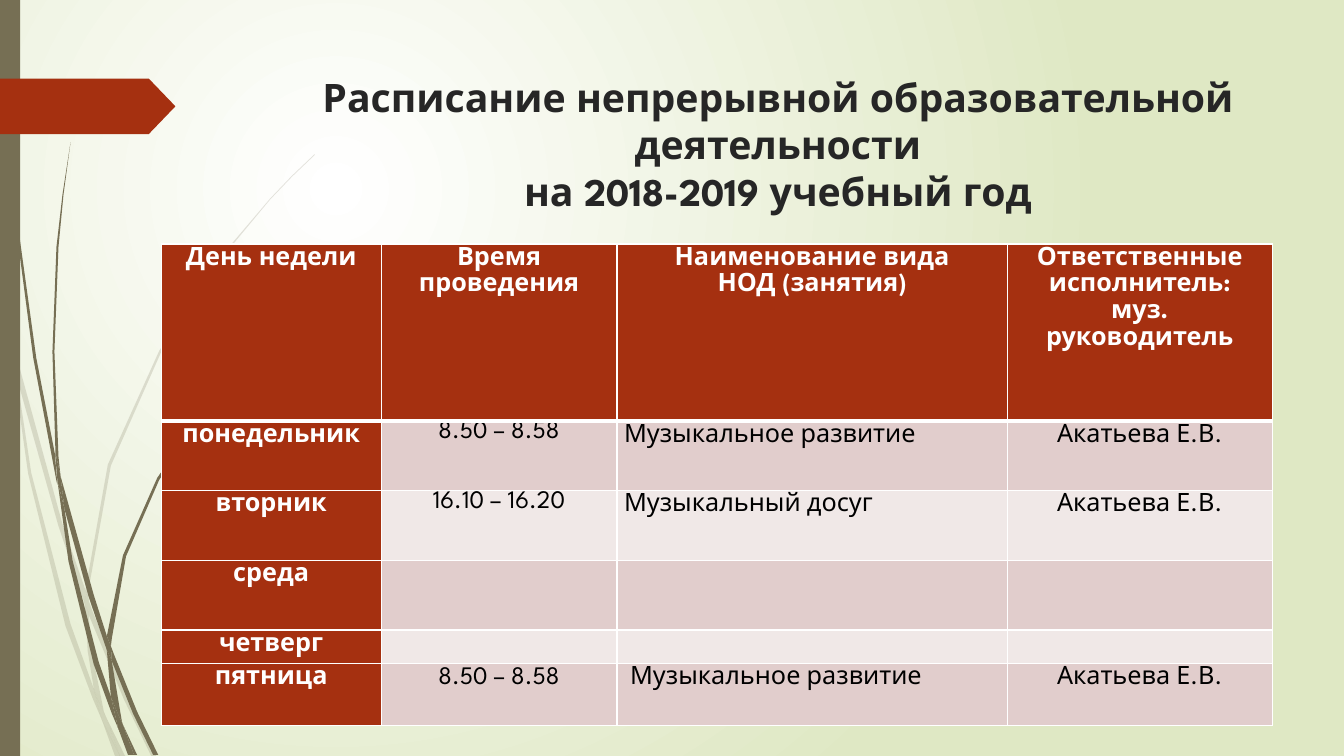
from lxml import etree
from pptx import Presentation
from pptx import util as u
from pptx.dml.color import RGBColor
from pptx.enum import shapes, text
from pptx.oxml import ns

Inches = u.Inches
FONT = "League Spartan"
WHITE = RGBColor(0xFF, 0xFF, 0xFF)
BLACK = RGBColor(0x00, 0x00, 0x00)
INK = RGBColor(0x26, 0x26, 0x26)
RUST = RGBColor(0xA5, 0x30, 0x10)
OLIVE = RGBColor(0x76, 0x6F, 0x54)
PALE_GREEN = RGBColor(0xDF, 0xE8, 0xC4)
BANDS = (RGBColor(0xF0, 0xE8, 0xE7), RGBColor(0xE1, 0xCD, 0xCC))

PALE_WISPS = [
    [(0.11, 3.5), (0.09, 3.22), (0, 2.82), (0, 2.99), (0.1, 3.44)],
    [(0.58, 5.22), (0.84, 5.99), (0.85, 5.86), (0.62, 5.2), (0.14, 3.45), (0.17, 3.76)],
    [(0.92, 6.07), (0.88, 5.96), (0.88, 6.1), (1.23, 6.94), (1.5, 7.5), (1.55, 7.5),
     (1.27, 6.92)],
    [(1.19, 7.5), (1.24, 7.5), (1.05, 7.11)],
    [(0.93, 6.83), (0.7, 6.19), (0.31, 4.69), (0.17, 3.76), (0.11, 3.5), (0.28, 4.7),
     (0.65, 6.21), (0.92, 6.93), (1.01, 7.14), (0.99, 7.07)],
    [(0.84, 5.99), (0.87, 6.46), (0.93, 6.83), (0.96, 6.92), (1.05, 7.11), (1.03, 7.06),
     (0.91, 6.46), (0.88, 6.1), (0.88, 6.08)],
    [(0.88, 5.84), (1.1, 4.62), (1.6, 3.49), (2.29, 2.45), (2.68, 1.98), (2.9, 1.75),
     (3.12, 1.54), (3.12, 1.53), (2.89, 1.75), (2.68, 1.97), (2.28, 2.44), (1.58, 3.48),
     (1.07, 4.61), (0.85, 5.84), (0.85, 5.86), (0.88, 5.96)],
    [(1.01, 7.14), (1.14, 7.5), (1.19, 7.5)],
    [(0.88, 6.08), (0.88, 6.1), (0.88, 5.96), (0.85, 5.86), (0.84, 5.99)],
    [(0.96, 6.92), (0.93, 6.83), (0.99, 7.07), (1.01, 7.14), (1.19, 7.5), (1.05, 7.11)],
]
DARK_WISPS = [
    [(0.07, 1.1), (0.17, 2.33), (0.33, 3.55), (0.56, 4.77), (0.57, 4.81), (0.55, 4.57),
     (0.55, 4.53), (0.36, 3.55), (0.19, 2.32), (0.08, 1.09), (0.05, 0.48), (0.04, 0),
     (0.03, 0), (0.04, 0.48)],
    [(0.88, 5.92), (1.06, 6.45), (1.06, 6.31), (0.93, 5.9), (0.6, 4.72), (0.64, 5.05)],
    [(1.13, 6.49), (1.1, 6.41), (1.11, 6.56), (1.32, 7.08), (1.52, 7.49), (1.57, 7.49),
     (1.36, 7.06)],
    [(1.1, 6.91), (0.98, 6.57), (0.72, 5.56), (0.64, 5.05), (0.57, 4.77), (0.68, 5.57),
     (0.93, 6.59), (1.11, 7.08), (1.17, 7.22), (1.16, 7.17)],
    [(0.6, 4.72), (0.58, 4.53), (0.54, 3.49), (0.58, 2.45), (0.63, 1.93), (0.7, 1.41),
     (0.62, 1.93), (0.56, 2.45), (0.52, 3.49), (0.55, 4.49)],
    [(1.33, 7.49), (1.36, 7.49), (1.22, 7.19)],
    [(0.57, 4.77), (0.64, 5.05), (0.6, 4.72), (0.55, 4.49), (0.55, 4.53)],
    [(1.11, 6.33), (1.25, 5.52), (1.58, 4.76), (2.05, 4.06), (2.31, 3.74), (2.45, 3.59),
     (2.61, 3.44), (2.45, 3.58), (2.31, 3.73), (2.04, 4.05), (1.56, 4.74), (1.22, 5.51),
     (1.06, 6.31), (1.1, 6.41)],
    [(1.17, 7.22), (1.27, 7.49), (1.31, 7.49)],
    [(1.06, 6.45), (1.1, 6.91), (1.16, 7.06), (1.22, 7.19), (1.21, 7.16), (1.11, 6.56),
     (1.09, 6.51)],
    [(1.06, 6.45), (1.09, 6.51), (1.11, 6.56), (1.1, 6.41), (1.06, 6.31)],
    [(1.16, 7.06), (1.1, 6.91), (1.16, 7.17), (1.17, 7.22), (1.3, 7.49), (1.33, 7.49),
     (1.22, 7.19)],
]

COLUMN_WIDTHS = (2.18, 2.34, 3.87, 2.63)
ROW_HEIGHTS = (1.76, 0.69, 0.69, 0.69, 0.33, 0.62)
TEACHER = "Акатьева Е.В."
SCHEDULE = [
    ("День недели", "Время проведения", "Наименование вида\nНОД (занятия)",
     "Ответственные исполнитель:\vмуз. руководитель"),
    ("понедельник", "8.50 – 8.58", "Музыкальное развитие", TEACHER),
    ("вторник", "16.10 – 16.20", "Музыкальный досуг", TEACHER),
    ("среда", "", "", ""),
    ("четверг", "", "", ""),
    ("пятница", "8.50 – 8.58", "Музыкальное развитие", TEACHER),
]


class ScheduleSlide:
    def __init__(self, presentation):
        self.slide = presentation.slides.add_slide(presentation.slide_layouts[5])

    def background(self, inner, outer):
        fill = self.slide.background.fill
        fill.gradient()
        for stop, color, position in zip(fill.gradient_stops, (inner, outer), (0, 1)):
            stop.color.rgb = color
            stop.position = position
        gradient = next(self.slide.element.iter(ns.qn("a:gradFill")))
        gradient.remove(gradient.find(ns.qn("a:lin")))
        circle = etree.SubElement(gradient, ns.qn("a:path"), path="circle")
        etree.SubElement(circle, ns.qn("a:fillToRect"),
                         l="50000", t="50000", r="100000", b="100000")

    def paint(self, shape, color, opacity=100):
        shape.shadow.inherit = False
        shape.fill.solid()
        shape.fill.fore_color.rgb = color
        shape.line.fill.background()
        if opacity < 100:
            tint = next(shape.element.spPr.iter(ns.qn("a:srgbClr")))
            etree.SubElement(tint, ns.qn("a:alpha"), val=str(opacity * 1000))

    def wisps(self, outlines, color, opacity=100):
        group = self.slide.shapes.add_group_shape()
        for outline in outlines:
            points = [(Inches(x), Inches(y)) for x, y in outline]
            builder = group.shapes.build_freeform(*points[0])
            builder.add_line_segments(points[1:], close=True)
            self.paint(builder.convert_to_shape(), color, opacity)

    def preset(self, kind, left, top, width, height, color):
        shape = self.slide.shapes.add_shape(
            kind, Inches(left), Inches(top), Inches(width), Inches(height))
        self.paint(shape, color)
        return shape

    def format_paragraphs(self, frame, size, color, bold, alignment, spacing):
        for paragraph in frame.paragraphs:
            paragraph.alignment = alignment
            paragraph.line_spacing = spacing
            paragraph.font.name = FONT
            paragraph.font.size = u.Pt(size)
            paragraph.font.bold = bold
            paragraph.font.color.rgb = color

    def title(self, wording, left, top, width, height):
        shape = self.slide.shapes.title
        shape.left, shape.top = Inches(left), Inches(top)
        shape.width, shape.height = Inches(width), Inches(height)
        frame = shape.text_frame
        frame.text = wording
        frame.word_wrap = True
        frame.auto_size = text.MSO_AUTO_SIZE.NONE
        frame.vertical_anchor = text.MSO_ANCHOR.TOP
        self.format_paragraphs(frame, 28, INK, True, text.PP_ALIGN.CENTER, 1.0)

    def border(self, cell, side, width):
        properties = cell._tc.get_or_add_tcPr()
        line = etree.SubElement(properties, ns.qn("a:ln" + side), w=str(u.Pt(width)))
        fill = etree.SubElement(line, ns.qn("a:solidFill"))
        etree.SubElement(fill, ns.qn("a:srgbClr"), val=str(WHITE))

    def cell(self, cell, wording, row, column):
        heading = row == 0 or column == 0
        for side in "LRTB":
            thick = (row == 0 and side == "B") or (row == 1 and side == "T")
            self.border(cell, side, 3 if thick else 1)
        cell.fill.solid()
        cell.fill.fore_color.rgb = RUST if heading else BANDS[row % 2]
        cell.margin_left = cell.margin_right = Inches(0.07)
        cell.margin_top = cell.margin_bottom = 0
        if (row, column) == (5, 2):
            cell.margin_left = Inches(0.13)
        cell.text = wording
        left_aligned = column == 2 and not heading
        self.format_paragraphs(
            cell.text_frame, 18, WHITE if heading else BLACK, heading,
            text.PP_ALIGN.LEFT if left_aligned else text.PP_ALIGN.CENTER,
            1.0 if column == 1 and row in (1, 2) else 1.15)

    def table(self, rows, left, top):
        table = self.slide.shapes.add_table(
            len(rows), len(COLUMN_WIDTHS), Inches(left), Inches(top),
            Inches(sum(COLUMN_WIDTHS)), Inches(sum(ROW_HEIGHTS))).table
        table.first_col = True
        for column, width in zip(table.columns, COLUMN_WIDTHS):
            column.width = Inches(width)
        for row, height in zip(table.rows, ROW_HEIGHTS):
            row.height = Inches(height)
        for row, wordings in enumerate(rows):
            for column, wording in enumerate(wordings):
                self.cell(table.cell(row, column), wording, row, column)


def main():
    presentation = Presentation()
    presentation.slide_width, presentation.slide_height = Inches(13.33), Inches(7.5)
    page = ScheduleSlide(presentation)
    page.background(WHITE, PALE_GREEN)
    page.wisps(PALE_WISPS, OLIVE, 20)
    page.wisps(DARK_WISPS, OLIVE)
    page.preset(shapes.MSO_SHAPE.RECTANGLE, 0, 0, 0.2, 7.5, OLIVE)
    arrow = page.preset(shapes.MSO_SHAPE.PENTAGON, 0, 0.78, 1.74, 0.55, RUST)
    arrow.adjustments[0] = 0.48
    page.title("Расписание непрерывной образовательной деятельности\v"
               "на 2018-2019 учебный год", 2.84, 0.68, 9.75, 1.4)
    page.table(SCHEDULE, 1.6, 2.42)
    presentation.save("out.pptx")


if __name__ == "__main__":
    main()
